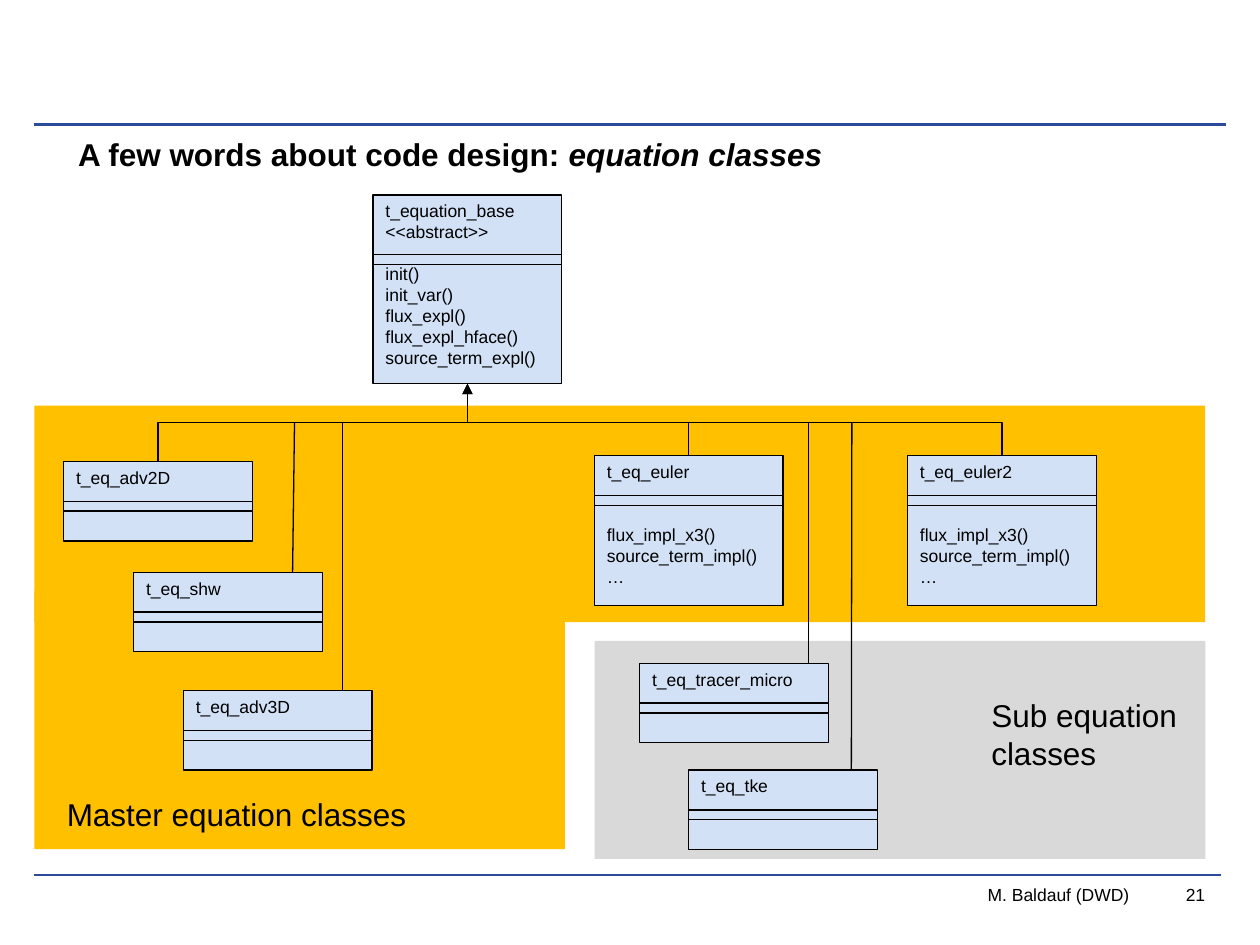
from dataclasses import dataclass

from lxml.etree import SubElement
from pptx import Presentation
from pptx.dml.color import RGBColor
from pptx.enum.shapes import MSO_CONNECTOR, MSO_SHAPE
from pptx.enum.text import MSO_ANCHOR, MSO_AUTO_SIZE, PP_ALIGN
from pptx.oxml.ns import qn
from pptx.util import Pt


@dataclass(frozen=True)
class Theme:
    font: str = "Arial"
    ink: RGBColor = RGBColor(0, 0, 0)
    rule: RGBColor = RGBColor(0x2D, 0x4B, 0x9B)
    master: RGBColor = RGBColor(0xFF, 0xC0, 0x00)
    sub: RGBColor = RGBColor(0xD9, 0xD9, 0xD9)
    box: RGBColor = RGBColor(0xD2, 0xE1, 0xF5)
    large: int = 18
    small: int = 10
    leading: float = 1.2
    line: float = 0.75


THEME = Theme()
BOX_W = 107.8
SMALL_H, TALL_H = 45.5, 85.7
HEAD_H, SLOT_H = 22.8, 5.7
BUS_Y = 241.4
BASE_X, BASE_Y, BASE_H = 213.2, 111.5, 107.8
APEX = (BASE_X + BASE_W / 2 if (BASE_W := BOX_W) else 0, BASE_Y + BASE_H)


def add_run(p, text, size, bold=False, italic=False):
    r = p.add_run()
    r.text = text
    r.font.name = THEME.font
    r.font.size = Pt(size)
    r.font.color.rgb = THEME.ink
    r.font.bold = bold
    r.font.italic = italic


def format_frame(tf, wrap=True, inset=7.2, anchor=MSO_ANCHOR.TOP):
    tf.auto_size = MSO_AUTO_SIZE.NONE
    tf.word_wrap = wrap
    tf.vertical_anchor = anchor
    tf.margin_left = tf.margin_right = Pt(inset)
    tf.margin_top = tf.margin_bottom = Pt(3.1)


def format_paragraph(p, size, align=PP_ALIGN.LEFT, gap=0):
    p.alignment = align
    p.line_spacing = Pt(size * THEME.leading)
    if gap:
        p.space_before = Pt(gap)


def add_lines(tf, lines, size, align=PP_ALIGN.LEFT, gaps=None):
    for i, text in enumerate(lines):
        p = tf.paragraphs[0] if i == 0 else tf.add_paragraph()
        format_paragraph(p, size, align, (gaps or {}).get(i, 0))
        add_run(p, text, size)


def add_title(s, parts):
    sp = s.shapes.title
    sp.left, sp.top, sp.width, sp.height = Pt(37.4), Pt(74.2), Pt(444), Pt(29)
    format_frame(sp.text_frame, wrap=False)
    p = sp.text_frame.paragraphs[0]
    format_paragraph(p, THEME.large)
    for text, italic in parts:
        add_run(p, text, THEME.large, bold=True, italic=italic)


def add_label(s, x, y, w, h, lines):
    tf = s.shapes.add_textbox(Pt(x), Pt(y), Pt(w), Pt(h)).text_frame
    format_frame(tf, wrap=False)
    add_lines(tf, lines, THEME.large)


def add_footer(s, x, w, text, inset):
    tf = s.shapes.add_textbox(Pt(x), Pt(502.6), Pt(w), Pt(17.3)).text_frame
    format_frame(tf, inset=inset, anchor=MSO_ANCHOR.MIDDLE)
    add_lines(tf, [text], THEME.small, PP_ALIGN.RIGHT)


def add_rect(s, x, y, w, h, color):
    sp = s.shapes.add_shape(MSO_SHAPE.RECTANGLE, Pt(x), Pt(y), Pt(w), Pt(h))
    sp.shadow.inherit = False
    sp.fill.solid()
    sp.fill.fore_color.rgb = color
    sp.line.fill.background()
    return sp


def add_line(s, x1, y1, x2, y2, color=THEME.ink, width=THEME.line,
             kind=MSO_CONNECTOR.STRAIGHT):
    c = s.shapes.add_connector(kind, Pt(x1), Pt(y1), Pt(x2), Pt(y2))
    c.line.color.rgb = color
    c.line.width = Pt(width)
    SubElement(c._element.spPr, qn("a:effectLst"))
    return c


def add_inheritance(s, x, y):
    end_x, end_y = APEX
    cx, cy = (x + end_x) / 2, (y + end_y) / 2
    half_w, half_h = (y - end_y) / 2, (x - end_x) / 2
    c = add_line(s, cx - half_w, cy + half_h, cx + half_w, cy - half_h,
                 kind=MSO_CONNECTOR.ELBOW)
    sppr = c._element.spPr
    sppr.find(qn("a:xfrm")).set("rot", "16200000")
    bend = round((y - BUS_Y) / (y - end_y) * 100000)
    guides = sppr.find(qn("a:prstGeom")).get_or_add_avLst()
    SubElement(guides, qn("a:gd"), name="adj1", fmla=f"val {bend}")
    SubElement(c.line._get_or_add_ln(), qn("a:tailEnd"), type="triangle")


def add_class(s, x, y, h, lines, gaps=None, head=HEAD_H):
    sp = add_rect(s, x, y, BOX_W, h, THEME.box)
    sp.line.color.rgb = THEME.ink
    sp.line.width = Pt(THEME.line)
    format_frame(sp.text_frame, wrap=False)
    add_lines(sp.text_frame, lines, THEME.small, gaps=gaps)
    for line_y in (y + head, y + head + SLOT_H):
        add_line(s, x, line_y, x + BOX_W, line_y)


def main():
    prs = Presentation()
    prs.slide_width, prs.slide_height = Pt(720), Pt(540)
    s = prs.slides.add_slide(prs.slide_layouts[5])

    add_line(s, 19.4, 500.2, 697.7, 500.2, THEME.rule, 1.19)
    add_line(s, 19.4, 71.2, 700.4, 71.2, THEME.rule, 2)
    add_rect(s, 19.7, 337.7, 303.2, 147.6, THEME.master)
    add_rect(s, 19.7, 231.8, 669, 123.7, THEME.master)
    add_rect(s, 339.8, 366.3, 349, 124.6, THEME.sub)
    add_title(s, [("A few words about code design: ", False),
                  ("equation classes", True)])

    add_class(s, BASE_X, BASE_Y, BASE_H,
              ["t_equation_base", "<<abstract>>", "init()", "init_var()",
               "flux_expl()", "flux_expl_hface()", "source_term_expl()"],
              gaps={2: 12}, head=33.8)
    for name, x, y in [("t_eq_adv2D", 36.4, 263.6), ("t_eq_shw", 76.4, 327),
                       ("t_eq_adv3D", 104.8, 394.5),
                       ("t_eq_tracer_micro", 365.5, 379),
                       ("t_eq_tke", 393.5, 440)]:
        add_class(s, x, y, SMALL_H, [name])
    for name, x in [("t_eq_euler", 339.7), ("t_eq_euler2", 518.6)]:
        add_class(s, x, 260.4, TALL_H,
                  [name, "flux_impl_x3()", "source_term_impl()", "…"],
                  gaps={1: 24})

    add_inheritance(s, 90.3, 263.6)
    add_inheritance(s, 572.5, 260.4)
    for x, y, bus_x in [(167.2, 327, 168.3), (195.7, 394.5, 195.7),
                        (393.4, 260.4, 393.4), (462, 379, 462),
                        (486.5, 440, 486.8)]:
        add_line(s, x, y, bus_x, BUS_Y)

    add_label(s, 31.1, 451, 210, 29, ["Master equation classes"])
    add_label(s, 559.4, 394.8, 122, 51, ["Sub equation", "classes"])
    add_footer(s, 360, 292.3, "M. Baldauf (DWD)", 7.2)
    add_footer(s, 652.3, 36.4, "21", 0)
    prs.save("out.pptx")


if __name__ == "__main__":
    main()
